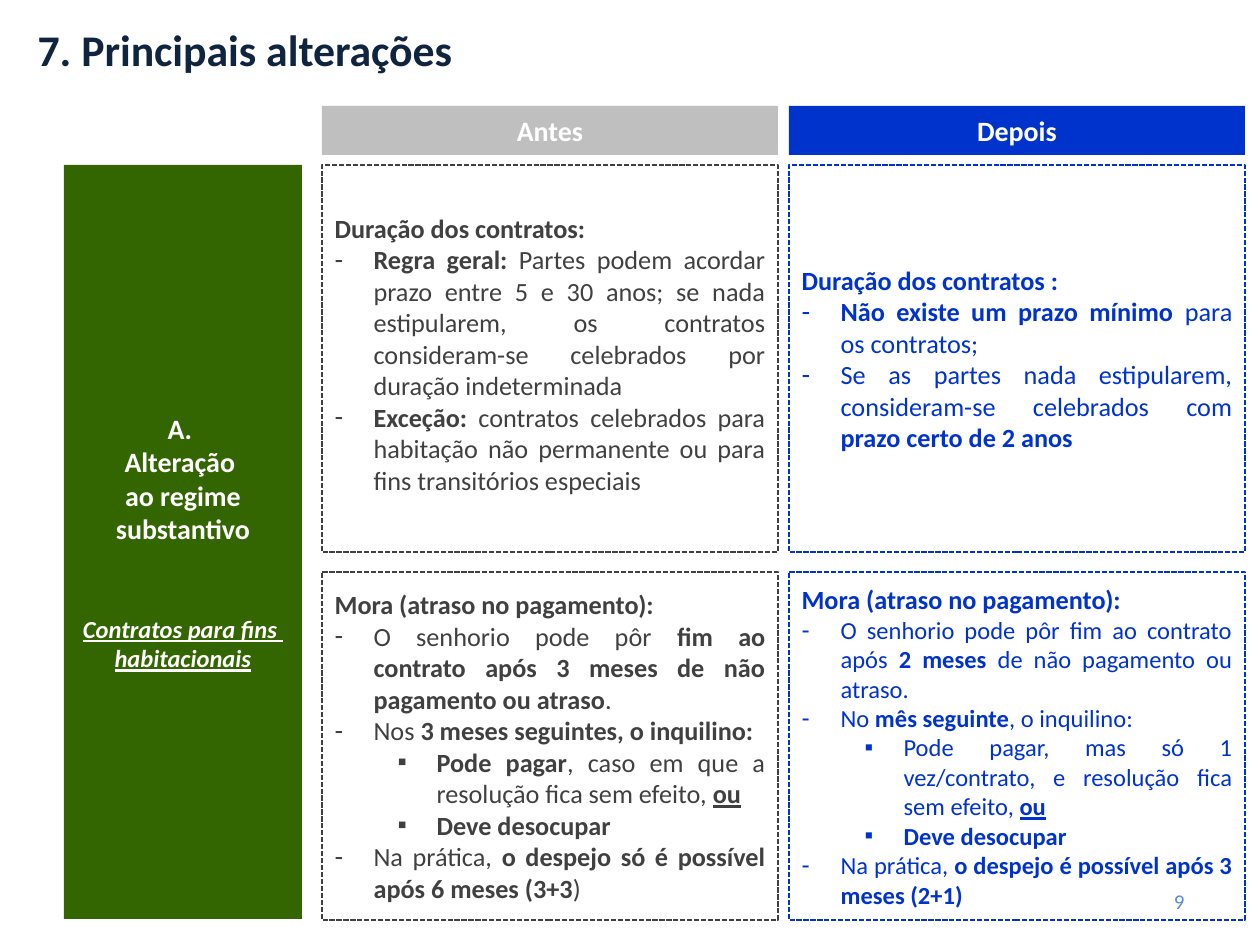
from dataclasses import dataclass

from lxml.etree import SubElement
from pptx import Presentation
from pptx.dml.color import RGBColor
from pptx.enum.dml import MSO_LINE
from pptx.enum.shapes import MSO_SHAPE
from pptx.enum.text import MSO_ANCHOR, MSO_AUTO_SIZE, PP_ALIGN
from pptx.oxml.ns import qn
from pptx.util import Emu, Pt

EMU_PER_PX = 914400 / 126
FONT = "Calibri"
COLORS = {
    "title": "0F243E",
    "topic": "336600",
    "header_before": "BFBFBF",
    "before": "404040",
    "after": "0033CC",
    "white": "FFFFFF",
    "number": "558ED5",
}
COLUMN_X = (322, 789)
COLUMN_WIDTH = 456
HEADER_Y, HEADER_HEIGHT = 106, 49
ROWS = ((165, 387), (572, 348))
INDENT = 39
SUB_INDENT = 102


@dataclass(frozen=True)
class Run:
    text: str
    bold: bool = False
    italic: bool = False
    underline: bool = False


@dataclass(frozen=True)
class Line:
    runs: tuple[Run, ...]
    size: int = 15
    bullet: str = ""
    indent: int = 0
    space_before: int = 0


@dataclass(frozen=True)
class Cell:
    column: int
    row: int
    color: str
    lines: tuple[Line, ...]
    bottom_inset: int = 6


def px(length: int) -> Emu:
    return Emu(round(length * EMU_PER_PX))


def rgb(name: str) -> RGBColor:
    return RGBColor.from_string(COLORS[name])


def bold(text: str) -> Run:
    return Run(text, bold=True)


def heading(text: str, size: int = 15) -> Line:
    return Line((bold(text),), size)


def item(*runs: Run, size: int = 15) -> Line:
    return Line(runs, size, "-", INDENT)


def subitem(*runs: Run, size: int = 15) -> Line:
    return Line(runs, size, "▪", SUB_INDENT)


OR = Run("ou", bold=True, underline=True)

CELLS = (
    Cell(0, 0, "before", (
        heading("Duração dos contratos:"),
        item(bold("Regra geral: "),
             Run("Partes podem acordar prazo entre 5 e 30 anos; se nada estipularem, "
                 "os contratos consideram-se celebrados por duração indeterminada")),
        item(bold("Exceção:"),
             Run(" contratos celebrados para habitação não permanente ou para fins "
                 "transitórios especiais")),
    ), bottom_inset=16),
    Cell(0, 1, "before", (
        heading("Mora (atraso no pagamento):"),
        item(Run("O senhorio pode pôr "),
             bold("fim ao contrato após 3 meses de não pagamento ou atraso"), Run(". ")),
        item(Run("Nos "), bold("3 meses seguintes, o inquilino:")),
        subitem(bold("Pode pagar"),
                Run(", caso em que a resolução fica sem efeito, "), OR),
        subitem(bold("Deve desocupar ")),
        item(Run("Na prática, "),
             bold("o despejo só é possível após 6 meses (3+3"), Run(")")),
    )),
    Cell(1, 0, "after", (
        heading("Duração dos contratos :"),
        item(bold("Não existe um prazo mínimo "), Run("para os contratos; ")),
        item(Run("Se as partes nada estipularem, consideram-se celebrados com "),
             bold("prazo certo de 2 anos")),
    )),
    Cell(1, 1, "after", (
        heading("Mora (atraso no pagamento):"),
        item(Run("O senhorio pode pôr fim ao contrato após "), bold("2 meses "),
             Run("de não pagamento ou atraso. "), size=14),
        item(Run("No "), bold("mês seguinte"), Run(", o inquilino:"), size=14),
        subitem(Run("Pode pagar, mas só 1 vez/contrato, e resolução fica sem efeito, "),
                OR, size=14),
        subitem(bold("Deve desocupar"), size=14),
        item(Run("Na prática, "), bold("o despejo é possível após 3 meses (2+1) "), size=14),
    )),
)

TOPIC = (
    heading("A. ", 16),
    heading("Alteração ", 16),
    heading("ao regime substantivo", 16),
    Line((Run("Contratos para fins ", True, True, True),), 14, space_before=39),
    Line((Run("habitacionais", True, True, True),), 14),
)


def place(shape, x: int, y: int, width: int, height: int) -> None:
    shape.left, shape.top = px(x), px(y)
    shape.width, shape.height = px(width), px(height)


def set_bullet(paragraph, line: Line) -> None:
    properties = paragraph._p.get_or_add_pPr()
    properties.set("marL", str(px(line.indent)))
    properties.set("indent", str(px(-INDENT if line.bullet else 0)))
    if line.bullet:
        SubElement(properties, qn("a:buChar"), char=line.bullet)
    else:
        SubElement(properties, qn("a:buNone"))


def write(shape, lines: tuple[Line, ...], color: str, align: PP_ALIGN,
          wrap: bool = True) -> None:
    frame = shape.text_frame
    frame.word_wrap = wrap
    frame.auto_size = MSO_AUTO_SIZE.NONE
    frame.vertical_anchor = MSO_ANCHOR.MIDDLE
    for index, line in enumerate(lines):
        paragraph = frame.add_paragraph() if index else frame.paragraphs[0]
        paragraph.alignment = align
        paragraph.level = 1 if line.indent == SUB_INDENT else 0
        paragraph.space_before = Pt(line.space_before)
        paragraph.space_after = Pt(0)
        set_bullet(paragraph, line)
        for part in line.runs:
            run = paragraph.add_run()
            run.text = part.text
            font = run.font
            font.name, font.size = FONT, Pt(line.size)
            font.bold, font.italic, font.underline = part.bold, part.italic, part.underline
            font.color.rgb = rgb(color)


def add_block(slide, x: int, y: int, width: int, height: int, fill: str,
              lines: tuple[Line, ...]) -> None:
    block = slide.shapes.add_shape(MSO_SHAPE.RECTANGLE, px(x), px(y), px(width), px(height))
    block.shadow.inherit = False
    block.fill.solid()
    block.fill.fore_color.rgb = rgb(fill)
    block.line.fill.background()
    write(block, lines, "white", PP_ALIGN.CENTER)


def fill_cell(placeholder, cell: Cell) -> None:
    top, height = ROWS[cell.row]
    place(placeholder, COLUMN_X[cell.column], top, COLUMN_WIDTH, height)
    placeholder.line.color.rgb = rgb(cell.color)
    placeholder.line.width = Pt(1)
    placeholder.line.dash_style = MSO_LINE.SQUARE_DOT
    placeholder.text_frame.margin_bottom = px(cell.bottom_inset)
    write(placeholder, cell.lines, cell.color, PP_ALIGN.JUSTIFY)


def main() -> None:
    presentation = Presentation()
    presentation.slide_width, presentation.slide_height = px(1260), px(945)
    comparison_layout = presentation.slide_layouts[4]
    slide = presentation.slides.add_slide(comparison_layout)
    title, *bodies = slide.placeholders

    place(title, 25, 16, 445, 66)
    write(title, (heading("7. Principais alterações", 25),), "title", PP_ALIGN.LEFT, wrap=False)
    add_block(slide, 64, 165, 238, 754, "topic", TOPIC)
    for x, label, fill in zip(COLUMN_X, ("Antes", "Depois"), ("header_before", "after")):
        add_block(slide, x, HEADER_Y, COLUMN_WIDTH, HEADER_HEIGHT, fill, (heading(label, 16),))
    for body, cell in zip(bodies, CELLS):
        fill_cell(body, cell)

    page_number = slide.shapes.add_textbox(px(903), px(876), px(294), px(50))
    write(page_number, (Line((Run("9"),), 12),), "number", PP_ALIGN.RIGHT)
    presentation.save("out.pptx")


if __name__ == "__main__":
    main()
